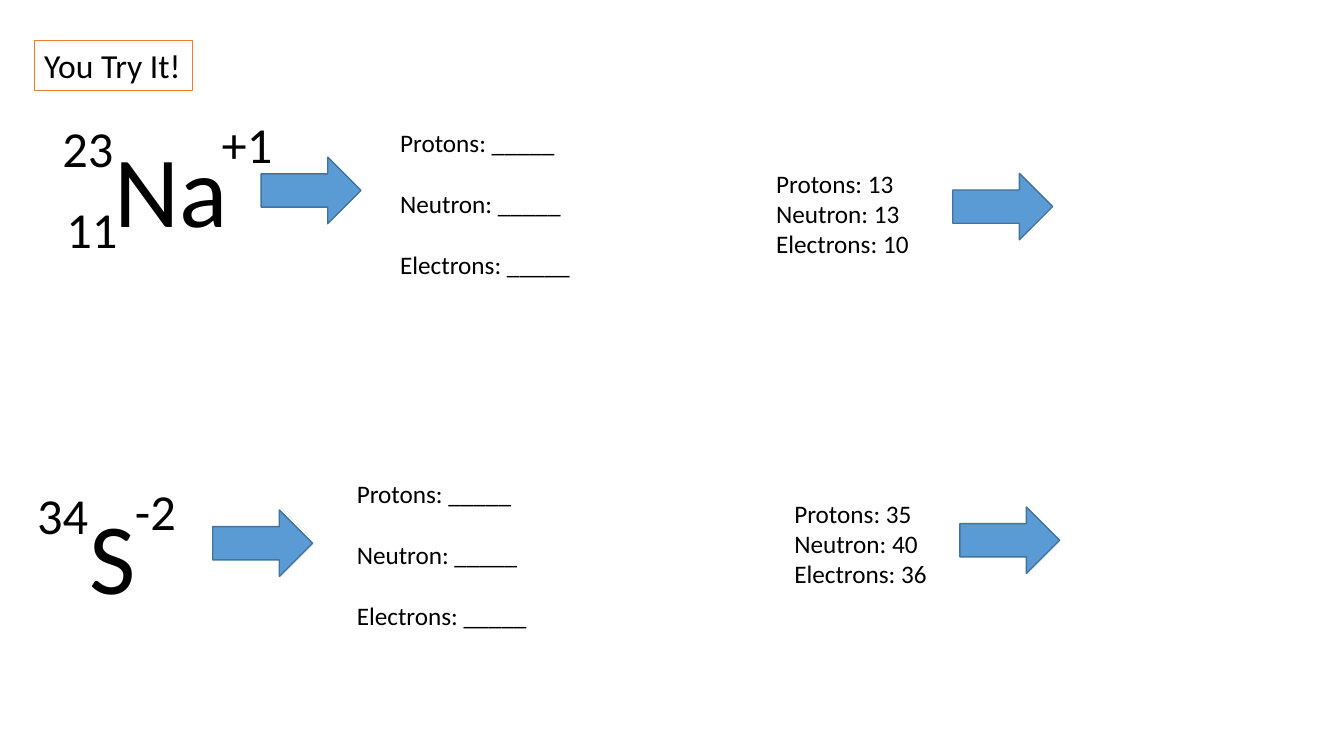
import pptx
import pptx.dml.color
import pptx.enum.shapes
import pptx.enum.text
import pptx.util

Inches = pptx.util.Inches
Shapes = pptx.enum.shapes.MSO_SHAPE

COLORS = {
    "text": "000000",
    "arrow": "5B9BD5",
    "arrow_line": "43739E",
    "title_fill": "FFFFFF",
    "title_line": "ED7D31",
}
PARTICLES = ("Protons", "Neutron", "Electrons")
BLANK = "_____"


def color(name):
    return pptx.dml.color.RGBColor.from_string(COLORS[name])


def write_text(shape, lines, size, font="Calibri", gap=0):
    frame = shape.text_frame
    frame.word_wrap = False
    frame.auto_size = pptx.enum.text.MSO_AUTO_SIZE.SHAPE_TO_FIT_TEXT
    frame.vertical_anchor = pptx.enum.text.MSO_ANCHOR.TOP
    for index, line in enumerate(lines):
        paragraph = frame.add_paragraph() if index else frame.paragraphs[0]
        paragraph.alignment = pptx.enum.text.PP_ALIGN.LEFT
        paragraph.space_before = pptx.util.Pt(gap if index else 0)
        run = paragraph.add_run()
        run.text = line
        run.font.name = font
        run.font.size = pptx.util.Pt(size)
        run.font.color.rgb = color("text")


class WorksheetSlide:
    symbol_size = 72
    script_size = 36
    body_size = 18
    title_size = 24
    blank_line = 22
    line_width = 1

    def __init__(self, presentation):
        self.slide = presentation.slides.add_slide(presentation.slide_layouts[6])

    def box(self, preset, left, top, width, height, fill, line):
        shape = self.slide.shapes.add_shape(
            preset, Inches(left), Inches(top), Inches(width), Inches(height))
        shape.shadow.inherit = False
        shape.fill.solid()
        shape.fill.fore_color.rgb = color(fill)
        shape.line.color.rgb = color(line)
        shape.line.width = pptx.util.Pt(self.line_width)
        return shape

    def title(self, text, left, top):
        shape = self.box(Shapes.RECTANGLE, left, top, 1.57, 0.5, "title_fill", "title_line")
        write_text(shape, [text], self.title_size)

    def arrow(self, left, top):
        self.box(Shapes.RIGHT_ARROW, left, top, 0.99, 0.66, "arrow", "arrow_line")

    def particles(self, values, left, top, width, height, gap=0):
        shape = self.slide.shapes.add_textbox(
            Inches(left), Inches(top), Inches(width), Inches(height))
        lines = [f"{name}: {value}" for name, value in zip(PARTICLES, values)]
        write_text(shape, lines, self.body_size, gap=gap)

    def questions(self, left, top):
        self.particles([BLANK] * 3, left, top, 1.91, 1.62, gap=self.blank_line)

    def counts(self, values, left, top):
        self.particles(values, left, top, 1.53, 1.01)

    def isotope(self, symbol, *scripts):
        group = self.slide.shapes.add_group_shape()
        sizes = [self.symbol_size] + [self.script_size] * len(scripts)
        for (text, left, top, width), size in zip((symbol, *scripts), sizes):
            height = 1.31 if size == self.symbol_size else 0.71
            shape = group.shapes.add_textbox(
                Inches(left), Inches(top), Inches(width), Inches(height))
            write_text(shape, [text], size)


def main():
    presentation = pptx.Presentation()
    presentation.slide_width = Inches(13.33)
    presentation.slide_height = Inches(7.5)
    worksheet = WorksheetSlide(presentation)

    worksheet.questions(3.87, 1.21)
    worksheet.isotope(("S", 0.79, 4.85, 0.67),
                      ("34", 0.27, 4.75, 0.71),
                      ("-2", 1.24, 4.71, 0.61))
    for left, top in ((2.59, 1.56), (2.11, 5.06), (9.45, 1.72), (9.52, 5.03)):
        worksheet.arrow(left, top)
    worksheet.counts((13, 13, 10), 7.6, 1.62)
    worksheet.isotope(("Na", 1.04, 1.21, 1.34),
                      ("23", 0.52, 1.11, 0.71),
                      ("11", 0.56, 1.92, 0.71),
                      ("+1", 2.1, 1.07, 0.71))
    worksheet.counts((35, 40, 36), 7.78, 4.89)
    worksheet.questions(3.44, 4.7)
    worksheet.title("You Try It!", 0.34, 0.4)

    presentation.save("out.pptx")


if __name__ == "__main__":
    main()
